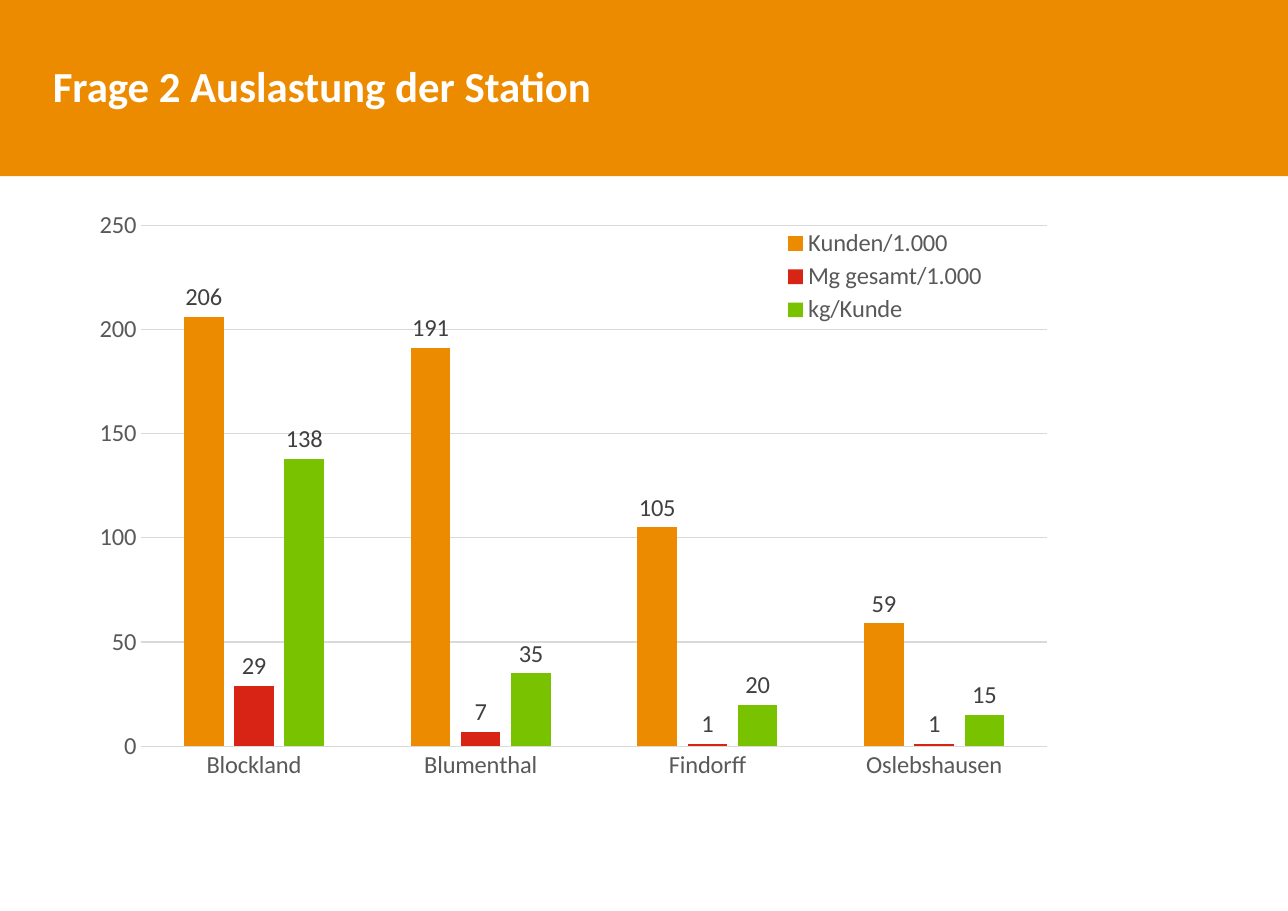
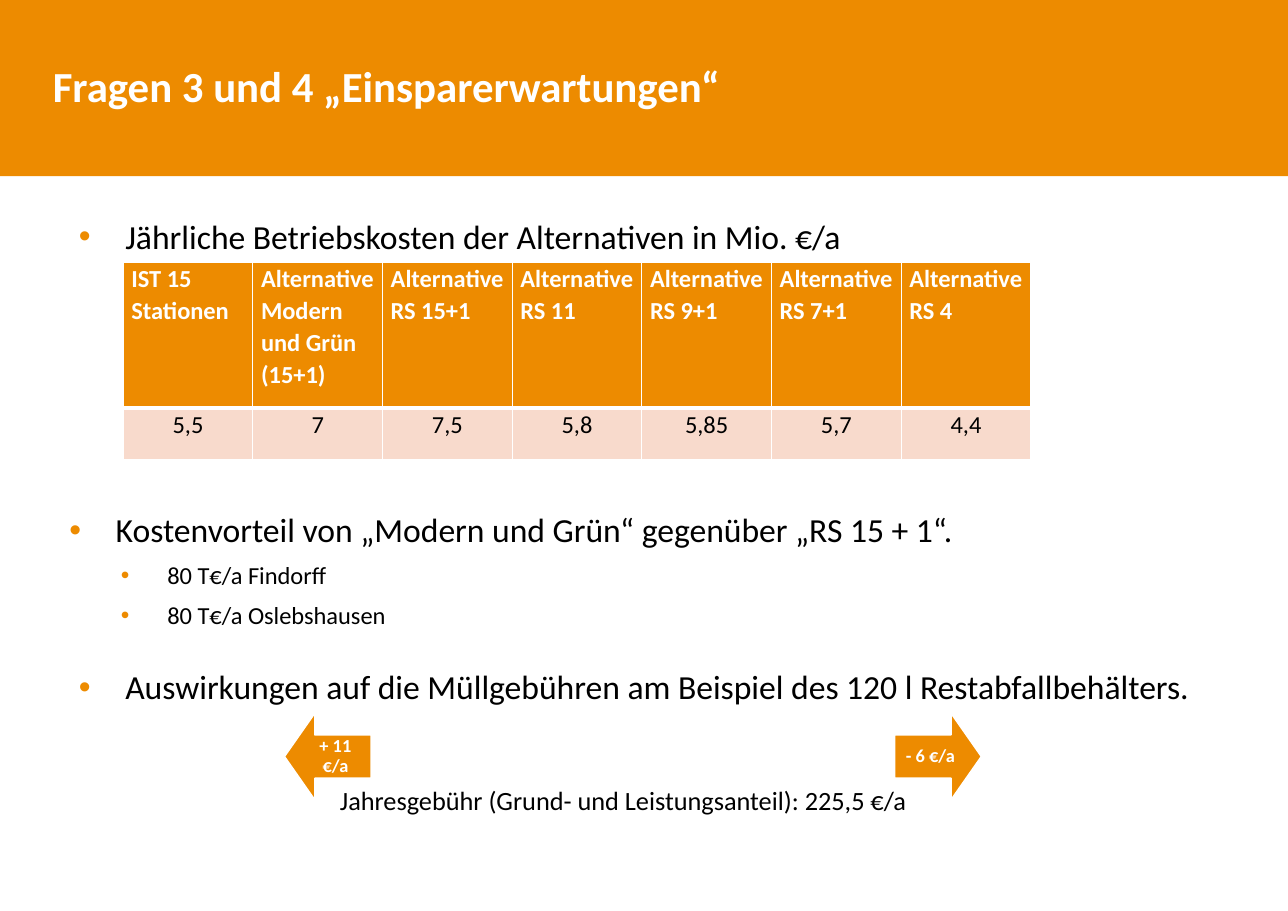
from lxml import etree
from pptx import Presentation
from pptx import util as u
from pptx.chart.data import CategoryChartData
from pptx.dml.color import RGBColor
from pptx.enum import chart as ch, shapes, text
from pptx.oxml import parse_xml
from pptx.oxml.ns import nsdecls, qn

FONT = "Calibri"
ORANGE, RED, GREEN = "ED8B00", "D72415", "79C200"
WHITE, BLACK, ROSE = "FFFFFF", "000000", "F8DACC"
GRID, AXIS_TEXT, LABEL_TEXT = "D9D9D9", "595959", "404040"
SLIDE_W, SLIDE_H, BAND_H = u.Cm(29.7), u.Cm(21), u.Cm(4.06)
BULLET_INDENT, LEVEL_STEP = u.Cm(1.07), u.Cm(1.19)
BODY_SIZE, SMALL_SIZE = 22, 16


def rgb(color):
    return RGBColor.from_string(color)


def style_font(font, size, color, bold=False):
    font.name, font.size, font.bold = FONT, u.Pt(size), bold
    font.color.rgb = rgb(color)


def fill_solid(target, color):
    target.fill.solid()
    target.fill.fore_color.rgb = rgb(color)


def set_insets(target, left, top, right, bottom):
    target.margin_left, target.margin_top = u.Cm(left), u.Cm(top)
    target.margin_right, target.margin_bottom = u.Cm(right), u.Cm(bottom)


def add_text_frame(slide, left, top, width, height):
    box = slide.shapes.add_textbox(u.Cm(left), u.Cm(top), u.Cm(width), u.Cm(height))
    box.text_frame.word_wrap = True
    return box.text_frame


def add_titled_slide(prs, title):
    """Add a blank slide with the orange band and its title."""
    slide = prs.slides.add_slide(prs.slide_layouts[6])
    band = slide.shapes.add_shape(shapes.MSO_SHAPE.RECTANGLE, 0, 0, SLIDE_W, BAND_H)
    band.shadow.inherit = False
    fill_solid(band, ORANGE)
    band.line.fill.background()
    frame = add_text_frame(slide, 1.22, 0.84, 26.31, 2.39)
    frame.vertical_anchor = text.MSO_ANCHOR.MIDDLE
    set_insets(frame, 0, 0.13, 0.25, 0.13)
    heading = frame.paragraphs[0]
    heading.text, heading.line_spacing = title, 0.9
    style_font(heading.font, 28, WHITE, bold=True)
    return slide


def set_bullet(paragraph, level):
    props = paragraph._p.get_or_add_pPr()
    props.set("marL", str(BULLET_INDENT + level * LEVEL_STEP))
    props.set("indent", str(-BULLET_INDENT))
    color = etree.SubElement(props, qn("a:buClr"))
    etree.SubElement(color, qn("a:srgbClr"), val=ORANGE)
    etree.SubElement(props, qn("a:buFont"), typeface="Arial")
    etree.SubElement(props, qn("a:buChar"), char="•")


def add_bullets(slide, left, top, width, height, heading, details=()):
    frame = add_text_frame(slide, left, top, width, height)
    for index, line in enumerate((heading, *details)):
        level = min(index, 1)
        paragraph = frame.add_paragraph() if index else frame.paragraphs[0]
        paragraph.text, paragraph.level = line, level
        set_bullet(paragraph, level)
        paragraph.line_spacing = 0.9
        if index:
            paragraph.space_before = u.Pt(8.8)
        style_font(paragraph.font, SMALL_SIZE if level else BODY_SIZE, BLACK)


def set_cell_borders(cell, bottom):
    props = cell._tc.get_or_add_tcPr()
    widths = {"lnL": 1, "lnR": 1, "lnT": 1, "lnB": bottom}
    for position, (side, width) in enumerate(widths.items()):
        props.insert(position, parse_xml(
            f'<a:{side} {nsdecls("a")} w="{u.Pt(width)}"><a:solidFill>'
            f'<a:srgbClr val="{WHITE}"/></a:solidFill></a:{side}>'))


def fill_cell(cell, value, is_header):
    cell.text = value
    set_insets(cell, 0.19, 0, 0.19, 0)
    fill_solid(cell, ORANGE if is_header else ROSE)
    set_cell_borders(cell, bottom=3 if is_header else 1)
    paragraph = cell.text_frame.paragraphs[0]
    paragraph.line_spacing = 1.07
    paragraph.alignment = text.PP_ALIGN.LEFT if is_header else text.PP_ALIGN.CENTER
    style_font(paragraph.font, SMALL_SIZE, WHITE if is_header else BLACK, is_header)


def add_cost_table(slide, costs):
    column_w, row_heights = 2.99, (3.35, 1.2)
    table = slide.shapes.add_table(
        2, len(costs), u.Cm(2.84), u.Cm(6.05),
        u.Cm(column_w * len(costs)), u.Cm(sum(row_heights))).table
    for row, height in zip(table.rows, row_heights):
        row.height = u.Cm(height)
    for col, entry in enumerate(costs.items()):
        table.columns[col].width = u.Cm(column_w)
        for row, value in enumerate(entry):
            fill_cell(table.cell(row, col), value, is_header=row == 0)


def add_fee_arrow(slide, kind, left, label):
    arrow = slide.shapes.add_shape(kind, u.Cm(left), u.Cm(16.44), u.Cm(2), u.Cm(2))
    arrow.shadow.inherit = False
    arrow.adjustments[0], arrow.adjustments[1] = 0.5, 0.35
    fill_solid(arrow, ORANGE)
    arrow.line.color.rgb, arrow.line.width = rgb(WHITE), u.Pt(1)
    frame = arrow.text_frame
    frame.word_wrap, frame.vertical_anchor = True, text.MSO_ANCHOR.MIDDLE
    set_insets(frame, 0.23, 0.23, 0.23, 0.23)
    paragraph = frame.paragraphs[0]
    paragraph.text, paragraph.line_spacing = label, 0.9
    paragraph.alignment = text.PP_ALIGN.CENTER
    style_font(paragraph.font, 12, WHITE, bold=True)


def manual_layout(x, y, w, h, inner=False):
    """Return a chart layout element in fractions of the chart area."""
    target = '<c:layoutTarget val="inner"/>' if inner else ""
    modes = '<c:xMode val="edge"/><c:yMode val="edge"/>'
    sizes = "".join(f'<c:{k} val="{v}"/>' for k, v in zip("xywh", (x, y, w, h)))
    return parse_xml(f'<c:layout {nsdecls("c")}><c:manualLayout>{target}{modes}'
                     f"{sizes}</c:manualLayout></c:layout>")


def style_axes(chart):
    for axis in (chart.category_axis, chart.value_axis):
        axis.major_tick_mark = axis.minor_tick_mark = ch.XL_TICK_MARK.NONE
        style_font(axis.tick_labels.font, SMALL_SIZE, AXIS_TEXT)
    values = chart.value_axis
    values.minimum_scale, values.maximum_scale, values.major_unit = 0, 250, 50
    values.tick_labels.number_format = "#,##0"
    values.tick_labels.number_format_is_linked = False
    values.format.line.fill.background()
    for line in (values.major_gridlines.format.line, chart.category_axis.format.line):
        line.color.rgb, line.width = rgb(GRID), u.Pt(0.75)


def style_series(series, color):
    fill_solid(series.format, color)
    series.invert_if_negative = False
    labels = series.data_labels
    labels.show_value = True
    labels.position = ch.XL_LABEL_POSITION.OUTSIDE_END
    labels.number_format, labels.number_format_is_linked = "#,##0", False
    style_font(labels.font, SMALL_SIZE, LABEL_TEXT)


def add_usage_chart(slide, stations, measures):
    data = CategoryChartData()
    data.categories = stations
    for name, values, _ in measures:
        data.add_series(name, values)
    chart = slide.shapes.add_chart(
        ch.XL_CHART_TYPE.COLUMN_CLUSTERED, u.Cm(1.88), u.Cm(4.6),
        u.Cm(22.73), u.Cm(14.83), data).chart
    style_font(chart.font, SMALL_SIZE, BLACK)
    chart.has_title = False
    style_axes(chart)
    plot = chart.plots[0]
    plot.gap_width, plot.overlap, plot.vary_by_categories = 219, -27, False
    for series, (_, _, color) in zip(plot.series, measures):
        style_series(series, color)

    plot_area = chart._chartSpace.find(".//" + qn("c:plotArea"))
    for automatic in plot_area.findall(qn("c:layout")):
        plot_area.remove(automatic)
    plot_area.insert(0, manual_layout(0.06, 0.04, 0.92, 0.81, inner=True))

    chart.has_legend = True
    legend = chart.legend
    legend.position, legend.include_in_layout = ch.XL_LEGEND_POSITION.BOTTOM, True
    style_font(legend.font, SMALL_SIZE, AXIS_TEXT)
    for automatic in legend._element.findall(qn("c:layout")):
        legend._element.remove(automatic)
    legend._element.find(qn("c:legendPos")).addnext(manual_layout(0.7, 0.04, 0.23, 0.16))


def build_usage_slide(prs):
    slide = add_titled_slide(prs, "Frage 2 Auslastung der Station")
    add_usage_chart(slide, ("Blockland", "Blumenthal", "Findorff", "Oslebshausen"), (
        ("Kunden/1.000", (206, 191, 105, 59), ORANGE),
        ("Mg gesamt/1.000", (29, 7, 1, 1), RED),
        ("kg/Kunde", (138, 35, 20, 15), GREEN),
    ))


def build_savings_slide(prs):
    slide = add_titled_slide(prs, "Fragen 3 und 4 „Einsparerwartungen“")
    add_cost_table(slide, {
        "IST 15 Stationen": "5,5",
        "Alternative Modern und Grün (15+1)": "7",
        "Alternative RS 15+1": "7,5",
        "Alternative RS 11": "5,8",
        "Alternative RS 9+1": "5,85",
        "Alternative RS 7+1": "5,7",
        "Alternative RS 4": "4,4",
    })
    add_bullets(slide, 1.57, 4.95, 18.75, 1.09,
                "Jährliche Betriebskosten der Alternativen in Mio. €/a")
    add_bullets(slide, 1.35, 11.71, 21.67, 2.97,
                "Kostenvorteil von „Modern und Grün“ gegenüber „RS 15 + 1“.",
                ("80 T€/a Findorff", "80 T€/a Oslebshausen"))
    add_bullets(slide, 1.57, 15.34, 27.58, 1.09,
                "Auswirkungen auf die Müllgebühren am Beispiel des 120 l Restabfallbehälters.")
    add_fee_arrow(slide, shapes.MSO_SHAPE.LEFT_ARROW, 6.56, "+ 11 €/a")
    add_fee_arrow(slide, shapes.MSO_SHAPE.RIGHT_ARROW, 20.63, "- 6 €/a")
    fee = add_text_frame(slide, 7.59, 17.96, 16.74, 0.99).paragraphs[0]
    fee.text = "Jahresgebühr (Grund- und Leistungsanteil): 225,5 €/a"
    style_font(fee.font, 17.2, BLACK)


def main():
    prs = Presentation()
    prs.slide_width, prs.slide_height = SLIDE_W, SLIDE_H
    build_usage_slide(prs)
    build_savings_slide(prs)
    prs.save("out.pptx")


if __name__ == "__main__":
    main()
